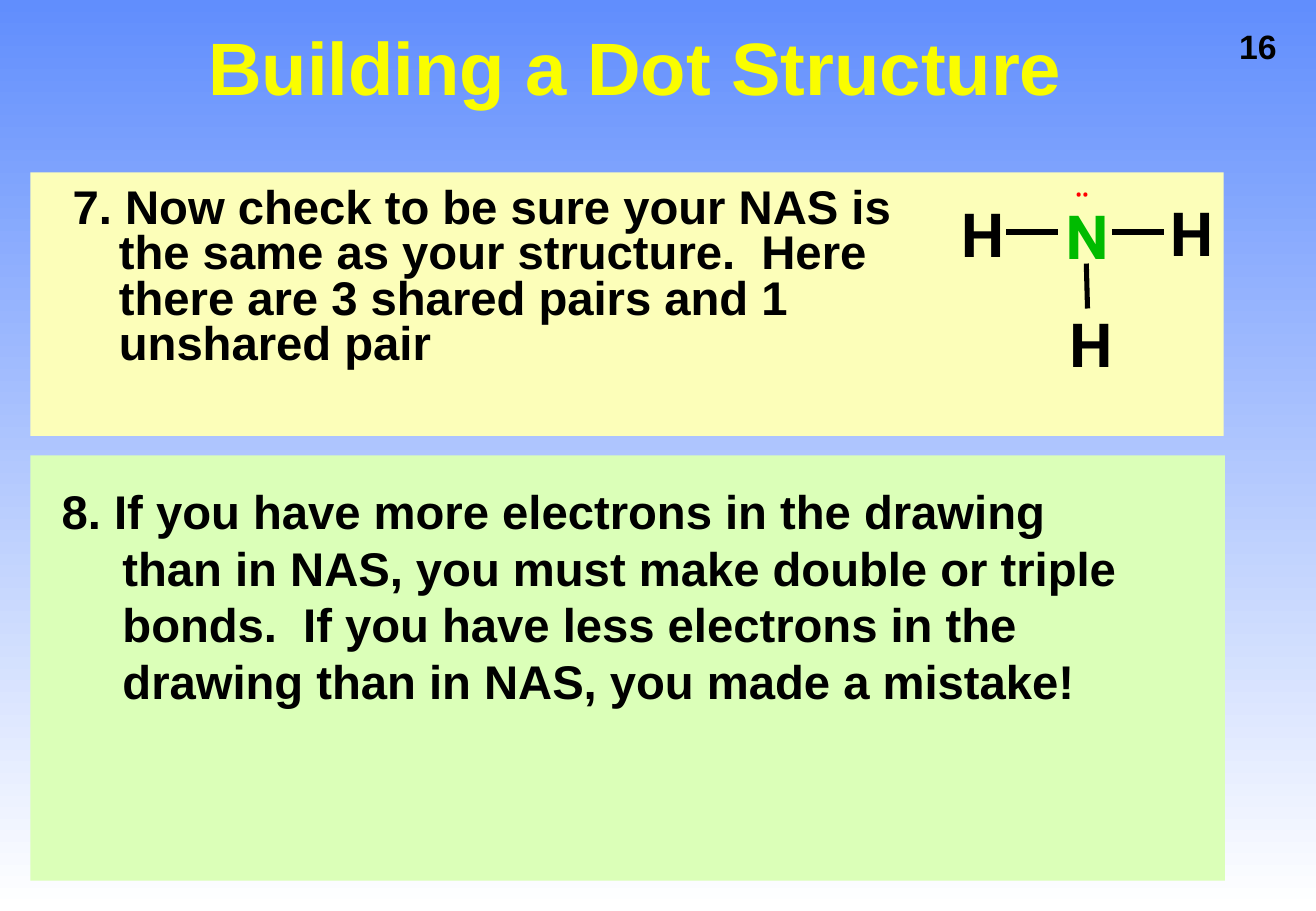
from pptx import Presentation, util as u
from pptx.dml.color import RGBColor
from pptx.enum import shapes, text
from pptx.oxml.ns import qn
from lxml import etree

COLORS = {
    "sky": "618EFD", "white": "FFFFFF", "title": "FAFD00", "text": "000000",
    "yellow": "FCFEB9", "green": "DBFFB8", "nitrogen": "00BB00", "electrons": "FF0000",
}


def rgb(name):
    return RGBColor.from_string(COLORS[name])


def box(*lengths):
    return [u.Inches(v) for v in lengths]


class Deck:
    """Holds the presentation, its text style and the current slide."""

    font = "Arial"
    atom_font = "Roboto"

    def __init__(self, width, height):
        self.prs = Presentation()
        self.prs.slide_width, self.prs.slide_height = box(width, height)
        self.s = self.prs.slides.add_slide(self.prs.slide_layouts[5])

    def background(self, top, bottom):
        fill = self.s.background.fill
        fill.gradient()
        fill.gradient_angle = 270
        for stop, color in zip(fill.gradient_stops, (top, bottom)):
            stop.color.rgb = rgb(color)

    def set_text(self, sp, words, size, color="text", font=None, bold=True,
                 margins=(0.1, 0.05), wrap=True, spacing=None, hanging=0):
        tf = sp.text_frame
        tf.text = words
        tf.word_wrap = wrap
        tf.auto_size = text.MSO_AUTO_SIZE.NONE
        tf.margin_left = tf.margin_right = u.Inches(margins[0])
        tf.margin_top = tf.margin_bottom = u.Inches(margins[1])
        p = tf.paragraphs[0]
        if spacing:
            p.line_spacing = spacing
        if hanging:
            pPr = p._p.get_or_add_pPr()
            pPr.set("marL", str(u.Inches(hanging)))
            pPr.set("indent", str(-u.Inches(hanging)))
        for r in p.runs:
            r.font.name = font or self.font
            r.font.size = u.Pt(size)
            r.font.bold = bold
            r.font.color.rgb = rgb(color)

    def title(self, at, words):
        sp = self.s.shapes.title
        sp.left, sp.top, sp.width, sp.height = box(*at)
        self.set_text(sp, words, 44, "title", spacing=0.9)
        sp.text_frame.vertical_anchor = text.MSO_ANCHOR.MIDDLE
        sp.text_frame.paragraphs[0].alignment = text.PP_ALIGN.CENTER

    def panel(self, at, color):
        sp = self.s.shapes.add_shape(shapes.MSO_SHAPE.RECTANGLE, *box(*at))
        sp.shadow.inherit = False
        sp.fill.solid()
        sp.fill.fore_color.rgb = rgb(color)
        sp.line.fill.background()

    def label(self, at, words, size, **style):
        self.set_text(self.s.shapes.add_textbox(*box(*at)), words, size, **style)

    def molecule(self, atoms, bonds):
        group = self.s.shapes.add_group_shape()
        for at, words, size, color, bold in atoms:
            sp = group.shapes.add_textbox(*box(*at))
            self.set_text(sp, words, size, color, self.atom_font, bold, (0, 0), False)
        for ends in bonds:
            line = group.shapes.add_connector(shapes.MSO_CONNECTOR.STRAIGHT, *box(*ends))
            line.line.color.rgb = rgb("text")
            line.line.width = u.Pt(3)
            etree.SubElement(line._element.spPr, qn("a:effectLst"))


def main():
    deck = Deck(10.83, 7.5)
    deck.background("sky", "white")
    deck.title((0.99, 0.17, 8.48, 0.83), "Building a Dot Structure")
    deck.label((10.1, 0.16, 0.54, 0.43), "16", 20, wrap=False)
    deck.panel((0.25, 1.42, 9.82, 2.17), "yellow")
    deck.panel((0.25, 3.75, 9.83, 3.5), "green")
    deck.label((0.5, 1.5, 7.08, 2.17),
               "7. Now check to be sure your NAS is the same as your structure.  "
               "Here there are 3 shared pairs and 1 unshared pair",
               28, spacing=0.8, hanging=0.38)
    deck.label((0.41, 3.92, 9.17, 2.46),
               "8. If you have more electrons in the drawing than in NAS, you must "
               "make double or triple bonds.  If you have less electrons in the "
               "drawing than in NAS, you made a mistake!",
               28, hanging=0.5)

    hydrogens = [(7.91, 1.62), (9.63, 1.61), (8.8, 2.53)]
    atoms = [((x, y, 0.36, 0.6), "H", 36, "text", True) for x, y in hydrogens]
    atoms += [((8.77, 1.64, 0.36, 0.6), "N", 36, "nitrogen", True),
              ((8.85, 1.5, 0.12, 0.2), "••", 12, "electrons", False)]
    bonds = [(8.28, 1.91, 8.71, 1.91), (9.15, 1.91, 9.58, 1.91), (8.94, 2.17, 8.95, 2.54)]
    deck.molecule(atoms, bonds)
    deck.prs.save("out.pptx")


if __name__ == "__main__":
    main()
